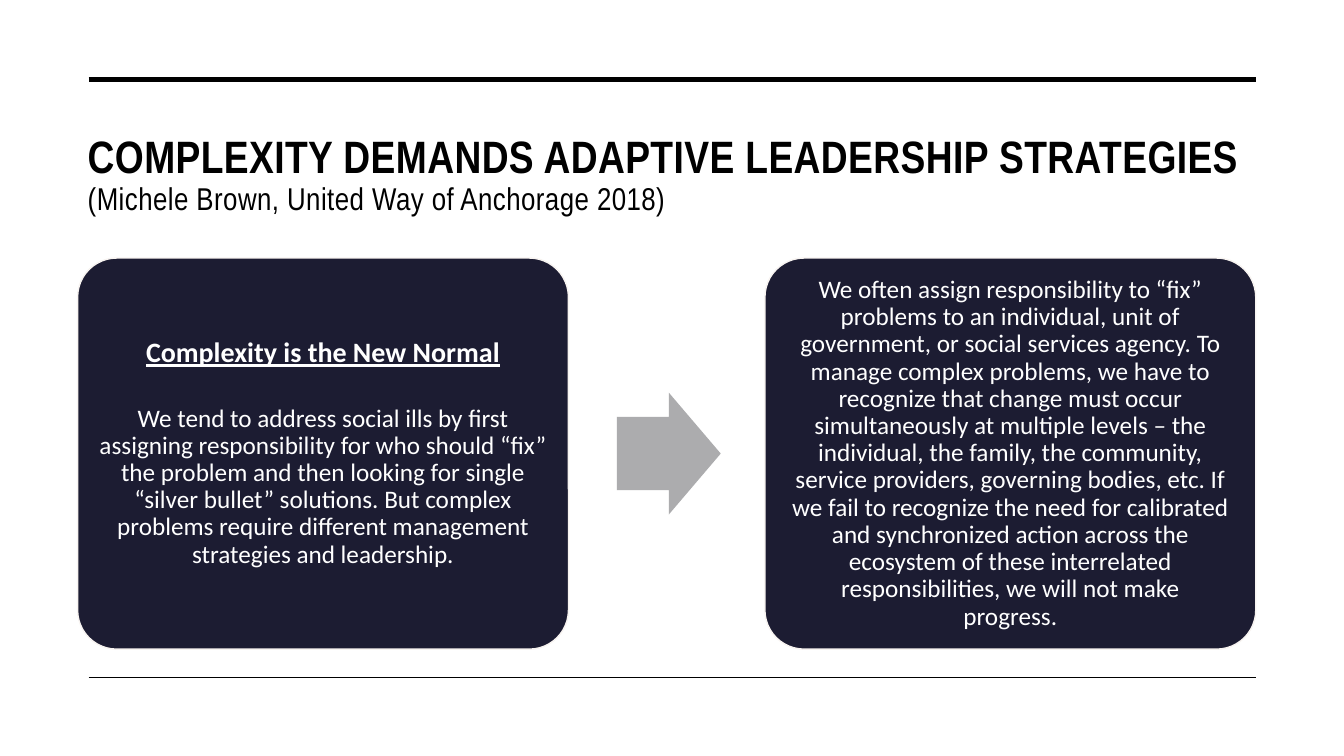
from lxml.etree import SubElement
from pptx import Presentation
from pptx.dml.color import RGBColor
from pptx.enum.shapes import MSO_CONNECTOR, MSO_SHAPE
from pptx.enum.text import MSO_ANCHOR, PP_ALIGN
from pptx.oxml.ns import qn
from pptx.util import Inches, Pt

HUES = {"ink": "000000", "navy": "1C1C32", "edge": "F8F4F1",
        "grey": "ACACAE", "white": "FFFFFF"}
HEAD, BODY = "Arial Narrow", "Calibri"


class Deck:
    """Holds the style and the current slide; lengths are percent of the slide."""

    def __init__(self):
        self.prs = Presentation()
        self.prs.slide_width = Inches(13.333)
        self.prs.slide_height = Inches(7.5)
        self.slide = self.prs.slides.add_slide(self.prs.slide_layouts[5])

    def hue(self, name):
        return RGBColor.from_string(HUES[name])

    def x(self, share):
        return round(self.prs.slide_width * share / 100)

    def y(self, share):
        return round(self.prs.slide_height * share / 100)

    def area(self, left, top, width, height):
        return self.x(left), self.y(top), self.x(width), self.y(height)

    def style(self, run, face, size, hue, bold=False, under=False):
        font = run.font
        font.name, font.size = face, Pt(size)
        font.bold, font.underline = bold, under
        font.color.rgb = self.hue(hue)

    def title(self, area, head, sub):
        shape = self.slide.shapes.title
        shape.left, shape.top, shape.width, shape.height = self.area(*area)
        frame = shape.text_frame
        frame.word_wrap = True
        frame.vertical_anchor = MSO_ANCHOR.TOP
        frame.margin_left = frame.margin_right = Inches(0.1)
        frame.margin_top, frame.margin_bottom = Inches(0.09), 0
        para = frame.paragraphs[0]
        para.text = f"{head}\v{sub}"
        para.alignment, para.line_spacing = PP_ALIGN.LEFT, 0.9
        for run, size, bold in zip(para.runs, (32.4, 22.5), (True, False)):
            self.style(run, HEAD, size, "ink", bold)
            run.font._element.set("spc", "30")

    def rule(self, left, right, top, weight):
        line = self.slide.shapes.add_connector(
            MSO_CONNECTOR.STRAIGHT, self.x(left), self.y(top),
            self.x(right), self.y(top))
        line.line.color.rgb = self.hue("ink")
        line.line.width = Pt(weight)
        SubElement(line._element.spPr, qn("a:effectLst"))

    def shape(self, kind, area, fill, adjust):
        shape = self.slide.shapes.add_shape(kind, *self.area(*area))
        shape.shadow.inherit = False
        shape.fill.solid()
        shape.fill.fore_color.rgb = self.hue(fill)
        shape.line.fill.background()
        for i, value in enumerate(adjust):
            shape.adjustments[i] = value
        return shape

    def card(self, area, paras, inset):
        """Draw a rounded card; paras lists (text, size, heading?)."""
        card = self.shape(MSO_SHAPE.ROUNDED_RECTANGLE, area, "navy", [0.1])
        card.line.color.rgb = self.hue("edge")
        card.line.width = Pt(1)
        frame = card.text_frame
        frame.word_wrap = True
        frame.vertical_anchor = MSO_ANCHOR.MIDDLE
        frame.margin_left = frame.margin_right = Inches(inset)
        frame.margin_top = frame.margin_bottom = Inches(inset)
        for i, (text, size, heading) in enumerate(paras):
            para = frame.add_paragraph() if i else frame.paragraphs[0]
            para.text = text
            para.alignment, para.line_spacing = PP_ALIGN.CENTER, 0.9
            para.space_before = Pt(26 if i else 0)
            for run in para.runs:
                self.style(run, BODY, size, "white", heading, heading)


def main():
    deck = Deck()
    deck.title((5.78, 16.53, 87.68, 13.6),
               "COMPLEXITY DEMANDS ADAPTIVE LEADERSHIP STRATEGIES",
               "(Michele Brown, United Way of Anchorage 2018)")
    for top, weight in ((10.53, 3.5), (89.6, 1)):
        deck.rule(6.6, 93.45, top, weight)

    normal = [
        ("Complexity is the New Normal", 20, True),
        ("We tend to address social ills by first assigning responsibility "
         "for who should “fix” the problem and then looking for single "
         "“silver bullet” solutions. But complex problems require different "
         "management strategies and leadership.", 18, False)]
    levels = [
        ("We often assign responsibility to “fix” problems to an individual, "
         "unit of government, or social services agency. To manage complex "
         "problems, we have to recognize that change must occur "
         "simultaneously at multiple levels – the individual, the family, "
         "the community, service providers, governing bodies, etc. If we "
         "fail to recognize the need for calibrated and synchronized action "
         "across the ecosystem of these interrelated responsibilities, "
         "we will not make\vprogress.", 18, False)]
    top, wide, high = 34.13, 36.52, 51.73
    deck.card((5.78, top, wide, high), normal, 0.08)
    tall = 16.13
    deck.shape(MSO_SHAPE.RIGHT_ARROW,
               (45.9, top + (high - tall) / 2, 7.73, tall), "grey", [0.6, 0.5])
    deck.card((56.92, top, wide, high), levels, 0.07)
    deck.prs.save("out.pptx")


if __name__ == "__main__":
    main()
